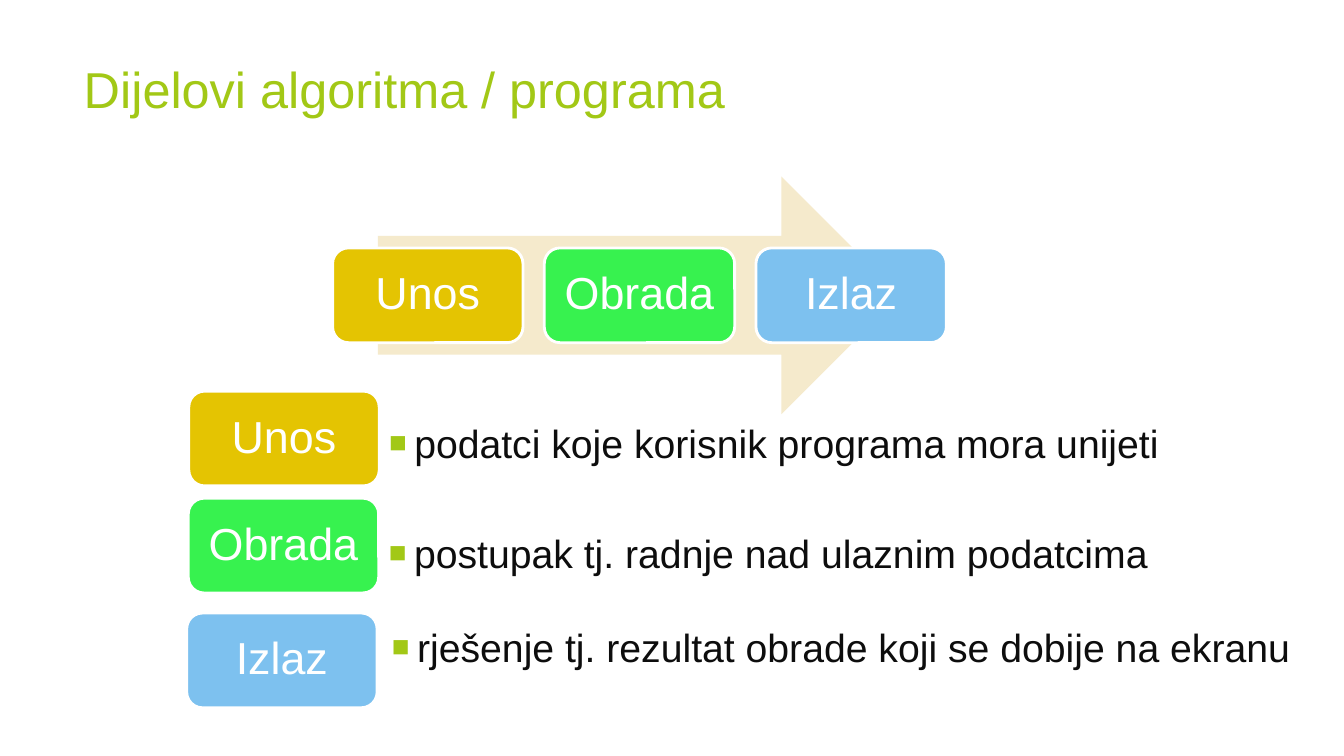
from lxml import etree
from pptx import Presentation
from pptx.dml.color import RGBColor
from pptx.enum.shapes import MSO_SHAPE
from pptx.enum.text import MSO_ANCHOR, MSO_AUTO_SIZE, PP_ALIGN
from pptx.oxml.ns import qn
from pptx.util import Pt

ARROW, ROUNDED = MSO_SHAPE.RIGHT_ARROW, MSO_SHAPE.ROUNDED_RECTANGLE
TOP, MIDDLE = MSO_ANCHOR.TOP, MSO_ANCHOR.MIDDLE
LEFT, CENTER = PP_ALIGN.LEFT, PP_ALIGN.CENTER
NO_FIT = MSO_AUTO_SIZE.NONE

COLORS = {
    "accent": "A2C816",
    "body": "0D0D0D",
    "white": "FFFFFF",
    "arrow": "F5EACC",
    "Unos": "E4C402",
    "Obrada": "37F24F",
    "Izlaz": "7DC1EF",
}
STEP_WIDTH, STEP_HEIGHT = 136, 67.7
FLOW_LEFT, FLOW_TOP, FLOW_PITCH = 237.6, 177.1, 151.2

# step, (left, top) of its label, explanation, frame of the explanation
STEPS = [
    ("Unos", (134.9, 279.4), "podatci koje korisnik programa mora unijeti",
     (270.7, 295.9, 668.2, 49.7)),
    ("Obrada", (134.5, 355.9), "postupak tj. radnje nad ulaznim podatcima",
     (270.7, 374.4, 668.2, 59.8)),
    ("Izlaz", (133.4, 437.9), "rješenje tj. rezultat obrade koji se dobije na ekranu",
     (272.9, 441.4, 657.4, 90)),
]


def rgb(name):
    return RGBColor.from_string(COLORS[name])


def write(shape, text, *, size, color, align=LEFT, anchor=TOP,
          inset=(7.2, 3.6), line_spacing=1.0, before=0):
    frame = shape.text_frame
    frame.word_wrap = True
    frame.auto_size = NO_FIT
    frame.vertical_anchor = anchor
    frame.margin_left = frame.margin_right = Pt(inset[0])
    frame.margin_top = frame.margin_bottom = Pt(inset[1])
    paragraph = frame.paragraphs[0]
    paragraph.alignment = align
    paragraph.line_spacing = line_spacing
    paragraph.space_before = Pt(before)
    run = paragraph.add_run()
    run.text = text
    run.font.name = "Arial"
    run.font.size = Pt(size)
    run.font.color.rgb = rgb(color)
    return paragraph


def add_square_bullet(paragraph):
    properties = paragraph._p.get_or_add_pPr()
    properties.set("marL", str(Pt(18)))
    properties.set("indent", str(-Pt(18)))
    bullet_color = etree.SubElement(properties, qn("a:buClr"))
    etree.SubElement(bullet_color, qn("a:srgbClr"), val=COLORS["accent"])
    etree.SubElement(properties, qn("a:buSzPct"), val="75000")
    etree.SubElement(properties, qn("a:buFont"), typeface="Arial")
    etree.SubElement(properties, qn("a:buChar"), char="■")


class AlgorithmSlide:
    def __init__(self, presentation):
        self.slide = presentation.slides.add_slide(presentation.slide_layouts[1])
        self.shapes = self.slide.shapes
        self.free_body = self.slide.placeholders[1]

    def place(self, shape, left, top, width, height):
        shape.left, shape.top = Pt(left), Pt(top)
        shape.width, shape.height = Pt(width), Pt(height)

    def title(self, text, frame):
        self.place(self.shapes.title, *frame)
        write(self.shapes.title, text, size=36, color="accent")

    def explanation(self, text, frame):
        """The first call fills the body placeholder, later ones add text boxes."""
        holder = self.free_body or self.shapes.add_textbox(0, 0, 0, 0)
        self.free_body = None
        self.place(holder, *frame)
        add_square_bullet(write(holder, text, size=28, color="body", before=20))

    def block(self, kind, frame, color):
        block = self.shapes.add_shape(kind, *map(Pt, frame))
        block.shadow.inherit = False
        block.fill.solid()
        block.fill.fore_color.rgb = rgb(color)
        block.line.fill.background()
        return block

    def step(self, name, left, top):
        step = self.block(ROUNDED, (left, top, STEP_WIDTH, STEP_HEIGHT), name)
        step.line.color.rgb = rgb("white")
        step.line.width = Pt(2)
        write(step, name, size=32, color="white", align=CENTER, anchor=MIDDLE,
              inset=(7, 7), line_spacing=0.9)


def main():
    presentation = Presentation()
    presentation.slide_width, presentation.slide_height = Pt(960), Pt(540)
    slide = AlgorithmSlide(presentation)
    slide.title("Dijelovi algoritma / programa", (52.6, 38.2, 793.4, 87.8))
    slide.block(ARROW, (270, 126, 373, 169.9), "arrow")
    for index, (name, label_corner, meaning, meaning_frame) in enumerate(STEPS):
        slide.step(name, FLOW_LEFT + index * FLOW_PITCH, FLOW_TOP)
        slide.step(name, *label_corner)
        slide.explanation(meaning, meaning_frame)
    presentation.save("out.pptx")


if __name__ == "__main__":
    main()
